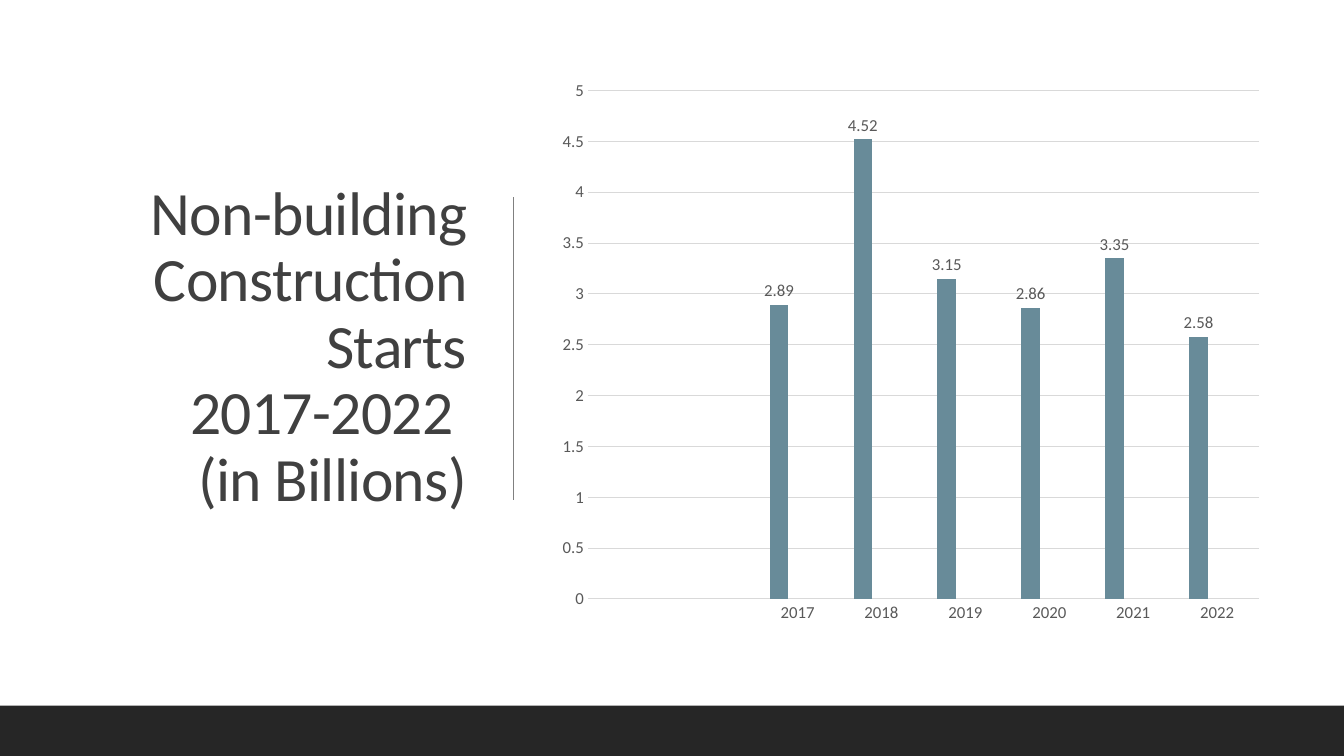
"""Build a slide with a column chart of non-building construction starts, 2017-2022."""
from lxml import etree
from pptx import Presentation
from pptx.chart.data import CategoryChartData
from pptx.dml.color import RGBColor
from pptx.enum.chart import XL_CHART_TYPE, XL_LABEL_POSITION, XL_TICK_MARK
from pptx.enum.shapes import MSO_CONNECTOR, MSO_SHAPE
from pptx.enum.text import MSO_ANCHOR, PP_ALIGN
from pptx.oxml.ns import qn
from pptx.util import Pt

PX = 9525
FONT = "Calibri"
COLUMNS = XL_CHART_TYPE.COLUMN_CLUSTERED
OUTSIDE = XL_LABEL_POSITION.OUTSIDE_END
NO_TICK = XL_TICK_MARK.NONE
STRAIGHT = MSO_CONNECTOR.STRAIGHT
RECT = MSO_SHAPE.RECTANGLE
MIDDLE = MSO_ANCHOR.MIDDLE
RIGHT = PP_ALIGN.RIGHT
COLORS = {
    "page": "FFFFFF", "title": "404040", "divider": "808080", "band": "262626",
    "label": "595959", "grid": "D9D9D9",
    "Series 1": "688B99", "Series 2": "7DA8B9", "Series 3": "B9CCD5",
}


def px(*lengths):
    return [n * PX for n in lengths]


def style_font(font, size, color):
    font.name = FONT
    font.size = Pt(size)
    font.color.rgb = RGBColor.from_string(COLORS[color])


prs = Presentation()
prs.slide_width, prs.slide_height = px(1280, 720)
s = prs.slides.add_slide(prs.slide_layouts[6])
s.background.fill.solid()
s.background.fill.fore_color.rgb = RGBColor.from_string(COLORS["page"])

title = s.shapes.add_textbox(*px(67, 66, 387, 531))
tf = title.text_frame
tf.word_wrap = True
tf.vertical_anchor = MIDDLE
p = tf.paragraphs[0]
p.alignment = RIGHT
p.line_spacing = 0.9
for i, line in enumerate(["Non-building Construction Starts", "2017-2022 ", "(in Billions)"]):
    if i:
        p.add_line_break()
    r = p.add_run()
    r.text = line
    style_font(r.font, 44, "title")
    r.font._element.set("spc", "-50")

divider = s.shapes.add_connector(STRAIGHT, *px(489, 188, 489, 476))
divider.line.color.rgb = RGBColor.from_string(COLORS["divider"])
divider.line.width = Pt(1)
etree.SubElement(divider._element.spPr, qn("a:effectLst"))

band = s.shapes.add_shape(RECT, *px(0, 672, 1280, 48))
band.shadow.inherit = False
band.fill.solid()
band.fill.fore_color.rgb = RGBColor.from_string(COLORS["band"])
band.line.fill.background()

data = CategoryChartData()
data.categories = ["", "", "2017", "2018", "2019", "2020", "2021", "2022"]
data.add_series("Series 1", [None, None, 2.89, 4.52, 3.15, 2.86, 3.35, 2.58])
for name in ("Series 2", "Series 3"):
    data.add_series(name, [None] * 8)
chart = s.shapes.add_chart(COLUMNS, *px(522, 66, 691, 538), data).chart
chart.has_legend = False
chart.has_title = False
style_font(chart.font, 12, "label")

plot = chart.plots[0]
plot.gap_width = 150
plot.overlap = 0
plot.vary_by_categories = False
for series in plot.series:
    series.format.fill.solid()
    series.format.fill.fore_color.rgb = RGBColor.from_string(COLORS[series.name])
labels = plot.series[0].data_labels
labels.show_value = True
labels.position = OUTSIDE
style_font(labels.font, 12, "label")

years, values = chart.category_axis, chart.value_axis
for axis in (years, values):
    axis.major_tick_mark = axis.minor_tick_mark = NO_TICK
    style_font(axis.tick_labels.font, 12, "label")
values.minimum_scale, values.maximum_scale, values.major_unit = 0, 5, 0.5
values.has_major_gridlines = True
values.format.line.fill.background()
for rule in (years.format.line, values.major_gridlines.format.line):
    rule.color.rgb = RGBColor.from_string(COLORS["grid"])
    rule.width = Pt(0.75)

prs.save("out.pptx")
